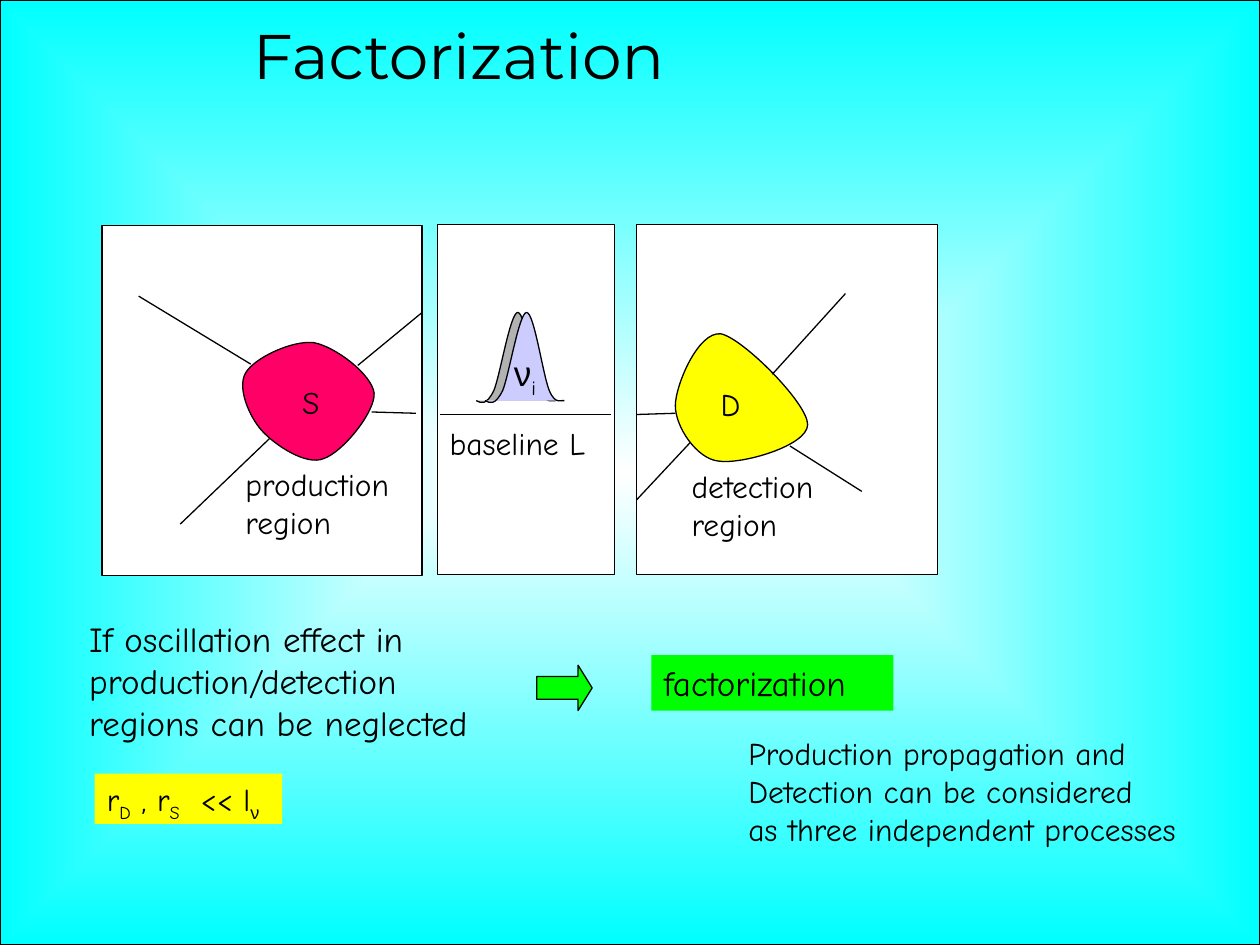
from itertools import chain

from lxml import etree
from pptx import Presentation
from pptx.dml.color import RGBColor
from pptx.enum.shapes import MSO_CONNECTOR, MSO_SHAPE
from pptx.enum.text import MSO_ANCHOR, MSO_AUTO_SIZE, PP_ALIGN
from pptx.oxml.ns import qn
from pptx.util import Pt

PX = 9144  # 100 px to the inch
COLORS = {
    "black": "000000", "white": "FFFFFF", "cyan": "00FFFF", "pink": "FF0066",
    "yellow": "FFFF00", "green": "00FF00", "gray": "B2B2B2", "lavender": "CCCCFF",
}
RGB = {name: RGBColor.from_string(value) for name, value in COLORS.items()}


def paint(shape, fill):
    """Give a shape a solid fill, a thin black outline and no shadow."""
    shape.shadow.inherit = False
    shape.fill.solid()
    shape.fill.fore_color.rgb = RGB[fill]
    shape.line.color.rgb = RGB["black"]
    shape.line.width = Pt(0.75)


def bend(shape):
    """Turn every three line segments of a freeform into one Bezier curve."""
    path = shape.element.spPr.find(".//" + qn("a:path"))
    segments = path.findall(qn("a:lnTo"))
    for first in range(0, len(segments), 3):
        curve = etree.Element(qn("a:cubicBezTo"))
        segments[first].addprevious(curve)
        for segment in segments[first:first + 3]:
            curve.append(segment[0])
            path.remove(segment)


presentation = Presentation()
presentation.slide_width, presentation.slide_height = 1000 * PX, 750 * PX
slide = presentation.slides.add_slide(presentation.slide_layouts[5])
shapes = slide.shapes

# Background, white in the middle and cyan at the edges
background = shapes.add_shape(MSO_SHAPE.RECTANGLE, 0, 0, 1000 * PX, 750 * PX)
paint(background, "white")
background.fill.gradient()
for stop, color in zip(background.fill.gradient_stops, ("white", "cyan")):
    stop.color.rgb = RGB[color]
gradient = background.element.spPr.find(qn("a:gradFill"))
gradient.remove(gradient.find(qn("a:lin")))
gradient_path = etree.SubElement(gradient, qn("a:path"), path="shape")
etree.SubElement(gradient_path, qn("a:fillToRect"),
                 {side: "50000" for side in "ltrb"})

# Title, in front of the background
title = shapes.title
background.element.addnext(title.element)
title.left, title.top, title.width, title.height = 82 * PX, 8 * PX, 577 * PX, 158 * PX
title.text_frame.text = "Factorization "
title_format = {"word_wrap": False, "auto_size": MSO_AUTO_SIZE.NONE,
                "vertical_anchor": MSO_ANCHOR.TOP}
for name, value in title_format.items():
    setattr(title.text_frame, name, value)
title_paragraph = title.text_frame.paragraphs[0]
title_paragraph.alignment = PP_ALIGN.CENTER
for name, value in {"name": "Montserrat", "size": Pt(36)}.items():
    setattr(title_paragraph.runs[0].font, name, value)
title_paragraph.runs[0].font.color.rgb = RGB["black"]

# Detection, propagation and production panels
for left, top, width in ((505, 178, 239), (347, 178, 141), (81, 179, 254)):
    panel = shapes.add_shape(MSO_SHAPE.RECTANGLE, left * PX, top * PX, width * PX, 278 * PX)
    paint(panel, "white")

# Regions and wave packets: start, then three control points per curve
packet = [((4, 2), (8, 4), (14, -8)), ((19, -20), (27, -70), (33, -70)),
          ((39, -70), (46, -20), (51, -8)), ((56, 4), (61, -1), (63, 0))]
packets = [((left, 318), [[(left + x, 318 + y) for x, y in curve] for curve in packet],
            color, False)
           for left, color in ((378, "gray"), (385, "lavender"))]
source_region = [((198, 331), (188, 308), (195, 296)), ((202, 284), (232, 270), (249, 272)),
                 ((266, 275), (295, 297), (297, 312)), ((298, 327), (272, 359), (257, 364)),
                 ((243, 370), (218, 353), (208, 342))]
detector_region = [((536, 306), (554, 263), (572, 265)), ((589, 268), (641, 320), (641, 337)),
                   ((641, 354), (588, 369), (570, 366)), ((553, 364), (536, 339), (536, 322))]
outlines = [((208, 342), source_region, "pink", True),
            ((536, 322), detector_region, "yellow", True), *packets]
for start, curves, color, closed in outlines:
    builder = shapes.build_freeform(*start, scale=PX)
    builder.add_line_segments(list(chain.from_iterable(curves)), close=closed)
    outline = builder.convert_to_shape()
    bend(outline)
    paint(outline, color)

# Particle lines and the baseline
lines = [
    (295, 327, 330, 328), (110, 235, 199, 289), (284, 290, 335, 248),
    (613, 297, 671, 233), (627, 354, 684, 390), (214, 348, 143, 416),
    (505, 397, 548, 351), (505, 329, 536, 328), (349, 329, 485, 329),
]
for ends in lines:
    connector = shapes.add_connector(MSO_CONNECTOR.STRAIGHT, *(end * PX for end in ends))
    connector.line.color.rgb = RGB["black"]
    connector.line.width = Pt(0.75)
    etree.SubElement(connector.element.spPr, qn("a:effectLst"))

arrow = shapes.add_shape(MSO_SHAPE.RIGHT_ARROW, 426 * PX, 528 * PX, 44 * PX, 36 * PX)
arrow.adjustments[1] = 0.31
paint(arrow, "green")

# Labels: box, size, fill, then paragraphs of runs; a leading _ marks a subscript
labels = [
    ((185, 364, 144, 70), 18, None, [["production"], ["region"]]),
    ((539, 366, 132, 70), 18, None, [["detection"], ["region"]]),
    ((347, 332, 135, 40), 18, None, [["baseline L"]]),
    ((517, 520, 192, 44), 20, "green", [["factorization"]]),
    ((61, 485, 352, 111), 20, None,
     [["If oscillation effect in"], ["production/detection"], ["regions can be neglected"]]),
    ((398, 274, 40, 43), 20, None, [["ν", "_i"]]),
    ((230, 299, 38, 40), 18, None, [["S"]]),
    ((562, 301, 38, 40), 18, None, [["D"]]),
    ((584, 578, 405, 101), 18, None,
     [["Production propagation and"], ["Detection can be considered"],
      ["as three independent processes"]]),
    ((75, 614, 149, 40), 18, "yellow", [["r", "_D", " , r", "_S", "  << l", "_ν"]]),
]
for box, size, fill, paragraphs in labels:
    label = shapes.add_textbox(*(length * PX for length in box))
    if fill:
        label.fill.solid()
        label.fill.fore_color.rgb = RGB[fill]
    frame = label.text_frame
    frame.word_wrap = True
    for index, texts in enumerate(paragraphs):
        paragraph = frame.add_paragraph() if index else frame.paragraphs[0]
        for text in texts:
            run = paragraph.add_run()
            run.text = text.lstrip("_")
            font_name = "Arial" if "ν" in text else "Comic Neue"
            for name, value in {"name": font_name, "size": Pt(size)}.items():
                setattr(run.font, name, value)
            run.font.color.rgb = RGB["black"]
            if text.startswith("_"):
                run._r.get_or_add_rPr().set("baseline", "-25000")

presentation.save("out.pptx")
